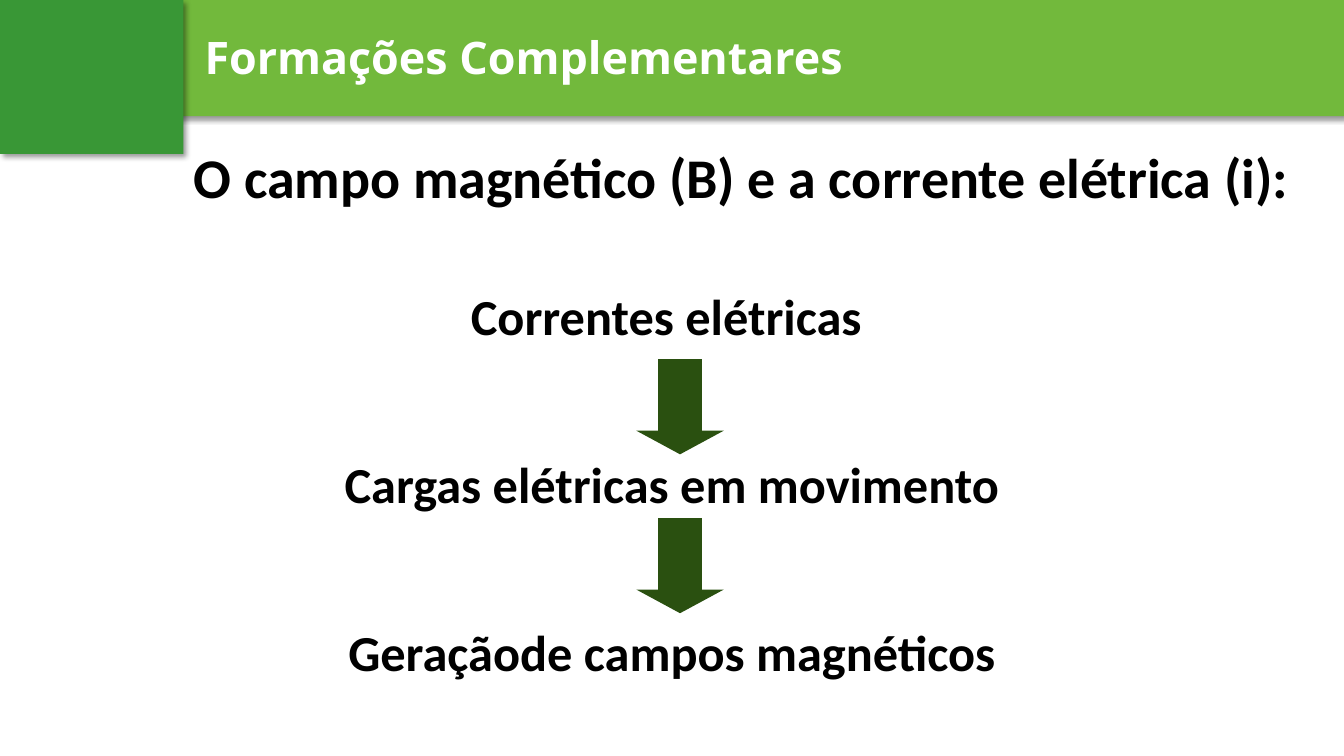
from lxml import etree
from pptx import Presentation
from pptx.dml.color import RGBColor
from pptx.enum.shapes import MSO_SHAPE
from pptx.enum.text import MSO_ANCHOR, PP_ALIGN
from pptx.oxml.ns import qn
from pptx.util import Pt

RECTANGLE = MSO_SHAPE.RECTANGLE
DOWN_ARROW = MSO_SHAPE.DOWN_ARROW
TOP, MIDDLE = MSO_ANCHOR.TOP, MSO_ANCHOR.MIDDLE
LEFT, CENTER = PP_ALIGN.LEFT, PP_ALIGN.CENTER

BAR_GREEN = "72B93C"
CORNER_GREEN = "399736"
ARROW_GREEN = "2A5010"
STEPS = [
    "Correntes elétricas ",
    "Cargas elétricas em movimento",
    "Geraçãode campos magnéticos",
]


def color(value):
    return RGBColor.from_string(value)


def make_shadow():
    effects = etree.Element(qn("a:effectLst"))
    shadow = etree.SubElement(
        effects, qn("a:outerShdw"), blurRad=str(Pt(4)), dist=str(Pt(3)),
        dir="2700000", algn="tl", rotWithShape="0")
    tint = etree.SubElement(shadow, qn("a:srgbClr"), val="000000")
    etree.SubElement(tint, qn("a:alpha"), val="40000")
    return effects


def add_block(page, kind, left, top, width, height, fill, shadow=False):
    block = page.shapes.add_shape(kind, Pt(left), Pt(top), Pt(width), Pt(height))
    block.fill.solid()
    block.fill.fore_color.rgb = color(fill)
    block.line.fill.background()
    block.shadow.inherit = False
    if shadow:
        properties = block._element.spPr
        properties.replace(properties.find(qn("a:effectLst")), make_shadow())
    return block


def add_arrow(page, top):
    arrow = add_block(page, DOWN_ARROW, 454.5, top, 62.5, 68, ARROW_GREEN)
    arrow.adjustments[0] = 0.5
    arrow.adjustments[1] = 0.27


def add_text(page, lines, left, top, width, height, size, font="Calibri",
             fill="000000", align=CENTER, anchor=TOP, spacing=1, gap=0,
             shadow=False):
    box = page.shapes.add_textbox(Pt(left), Pt(top), Pt(width), Pt(height))
    frame = box.text_frame
    frame.word_wrap = True
    frame.vertical_anchor = anchor
    for index, line in enumerate(lines):
        para = frame.paragraphs[0] if index == 0 else frame.add_paragraph()
        para.alignment = align
        para.line_spacing = spacing
        if index:
            para.space_before = Pt(gap)
        span = para.add_run()
        span.text = line
        span.font.size = Pt(size)
        span.font.bold = True
        span.font.name = font
        span.font.color.rgb = color(fill)
        if shadow:
            span.font._element.find(qn("a:solidFill")).addnext(make_shadow())


def main():
    deck = Presentation()
    deck.slide_width, deck.slide_height = Pt(960), Pt(540)
    page = deck.slides.add_slide(deck.slide_layouts[6])

    add_block(page, RECTANGLE, 101.5, 0, 858.5, 83, BAR_GREEN, shadow=True)
    add_text(page, ["Formações Complementares"], 139, 18, 779, 46, 32,
             font="Open Sans", fill="FFFFFF", align=LEFT, shadow=True)
    add_block(page, RECTANGLE, 0, 0, 131, 110, CORNER_GREEN, shadow=True)

    add_text(page, ["O campo magnético (B) e a corrente elétrica (i):"],
             124, 69, 811, 114, 40, anchor=MIDDLE)
    add_text(page, STEPS, 137, 183, 686, 357, 36, spacing=1.4, gap=59.5)
    for top in (256.5, 370):
        add_arrow(page, top)

    deck.save("out.pptx")


if __name__ == "__main__":
    main()
